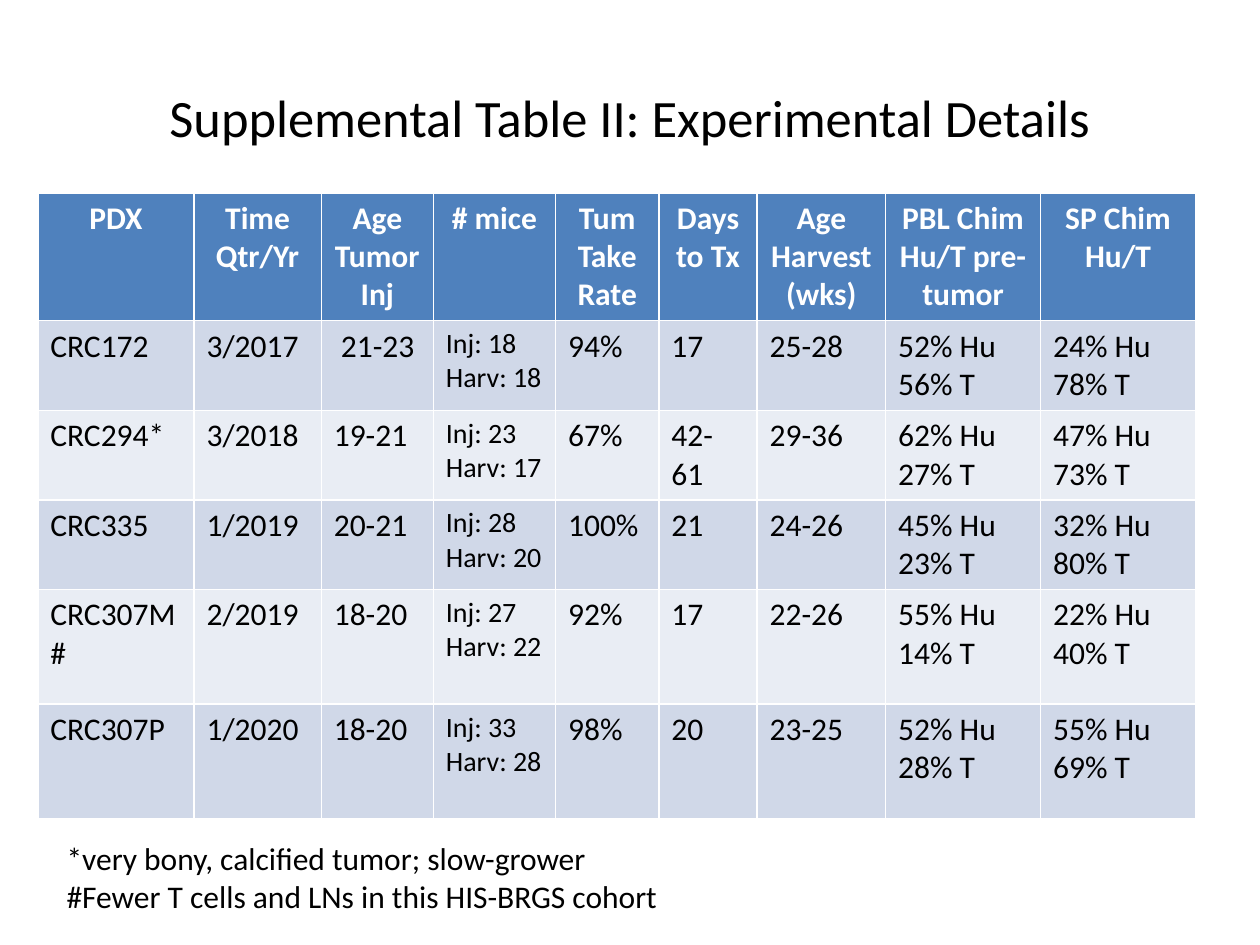
from pptx import Presentation
from pptx import util as u
from pptx.dml.color import RGBColor
from pptx.enum import text

TITLE = "Supplemental Table II: Experimental Details"
HEADER = ["PDX", "Time\nQtr/Yr", "Age Tumor Inj", "# mice", "Tum Take Rate",
          "Days to Tx", "Age Harvest (wks)", "PBL Chim Hu/T pre-tumor", "SP Chim\nHu/T"]
ROWS = [
    ["CRC172", "3/2017", " 21-23", "Inj: 18\nHarv: 18", "94%", "17", "25-28",
     "52% Hu\n56% T", "24% Hu\n78% T"],
    ["CRC294*", "3/2018", "19-21", "Inj: 23\nHarv: 17", "67%", "42-61", "29-36",
     "62% Hu\n27% T", "47% Hu 73% T"],
    ["CRC335", "1/2019", "20-21", "Inj: 28\nHarv: 20", "100%", "21", "24-26",
     "45% Hu\n23% T", "32% Hu\n80% T"],
    ["CRC307M#", "2/2019", "18-20", "Inj: 27\nHarv: 22", "92%", "17", "22-26",
     "55% Hu\n14% T", "22% Hu\n40% T"],
    ["CRC307P", "1/2020", "18-20", "Inj: 33\nHarv: 28", "98%", "20", "23-25",
     "52% Hu 28% T", "55% Hu\n69% T"],
]
NOTES = "*very bony, calcified tumor; slow-grower\n#Fewer T cells and LNs in this HIS-BRGS cohort"

COL_WIDTHS = [1.24, 1.01, 0.89, 0.97, 0.82, 0.78, 1.02, 1.23, 1.23]
ROW_HEIGHTS = [1.01, 0.71, 0.71, 0.71, 0.91, 0.91]
MICE_COL = HEADER.index("# mice")

THEME = {
    "font": "Calibri", "title": 30, "body": 18, "mice": 16,
    "ink": "000000", "header_ink": "FFFFFF", "header": "4F81BD",
    "bands": ("D0D8E8", "E9EDF4"),
}


def write(tf, content, size, color="ink", bold=False, align=text.PP_ALIGN.LEFT):
    tf.text = content
    for p in tf.paragraphs:
        p.alignment = align
        for r in p.runs:
            fmt = {"name": THEME["font"], "size": u.Pt(THEME[size]), "bold": bold}
            for key, value in fmt.items():
                setattr(r.font, key, value)
            r.font.color.rgb = RGBColor.from_string(THEME[color])


def place(sp, *box):
    for key, value in zip(("left", "top", "width", "height"), box):
        setattr(sp, key, u.Inches(value))


def add_details_table(s):
    grid = [HEADER] + ROWS
    table = s.shapes.add_table(
        len(grid), len(HEADER), u.Inches(0.3), u.Inches(1.53),
        u.Inches(sum(COL_WIDTHS)), u.Inches(sum(ROW_HEIGHTS))).table
    for col, width in zip(table.columns, COL_WIDTHS):
        col.width = u.Inches(width)
    for row, height in zip(table.rows, ROW_HEIGHTS):
        row.height = u.Inches(height)
    for i, values in enumerate(grid):
        fill = THEME["bands"][(i - 1) % 2] if i else THEME["header"]
        for j, value in enumerate(values):
            cell = table.cell(i, j)
            cell.fill.solid()
            cell.fill.fore_color.rgb = RGBColor.from_string(fill)
            if i == 0:
                write(cell.text_frame, value, "body", "header_ink", True, text.PP_ALIGN.CENTER)
            else:
                write(cell.text_frame, value, "mice" if j == MICE_COL else "body")


def main():
    prs = Presentation()
    prs.slide_width, prs.slide_height = u.Inches(10), u.Inches(7.5)
    s = prs.slides.add_slide(prs.slide_layouts[5])

    title = s.shapes.title
    place(title, 0.5, 0.3, 9, 1.25)
    title.text_frame.vertical_anchor = text.MSO_ANCHOR.MIDDLE
    write(title.text_frame, TITLE, "title", align=text.PP_ALIGN.CENTER)

    add_details_table(s)

    notes = s.shapes.add_textbox(*map(u.Inches, (0.43, 6.61, 4.96, 0.71)))
    tf = notes.text_frame
    tf.word_wrap = False
    tf.auto_size = text.MSO_AUTO_SIZE.SHAPE_TO_FIT_TEXT
    write(tf, NOTES, "body")

    prs.save("out.pptx")


if __name__ == "__main__":
    main()
